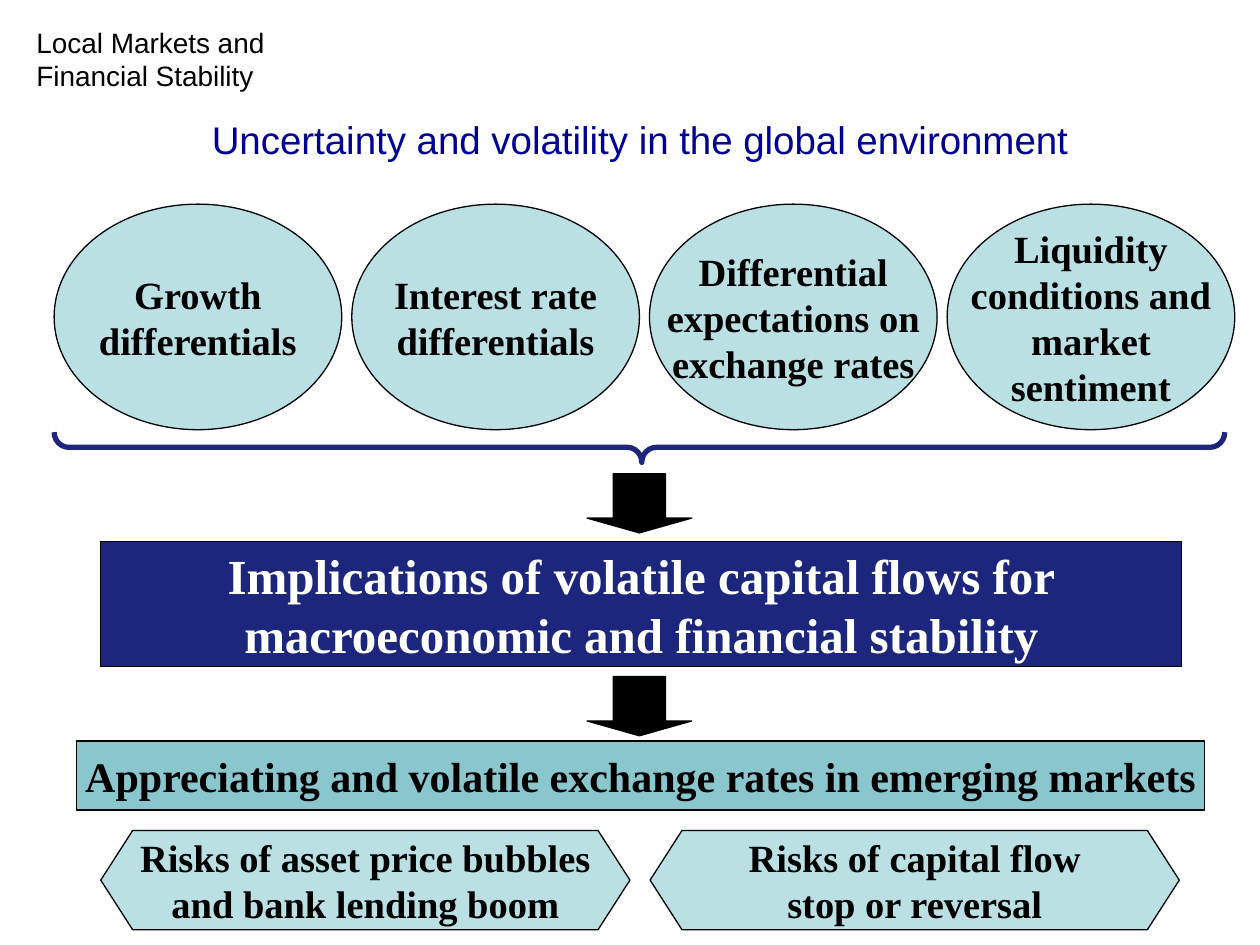
from pptx import Presentation
from pptx.dml.color import RGBColor
from pptx.enum.shapes import MSO_SHAPE
from pptx.enum.text import MSO_ANCHOR, MSO_AUTO_SIZE, PP_ALIGN
from pptx.util import Inches, Pt

COLORS = {
    "navy": "1C267D",
    "title": "000099",
    "pale": "BBE0E3",
    "teal": "8AC6CD",
    "black": "000000",
    "white": "FFFFFF",
}
UNIT = Inches(0.1)  # the slide is a grid of 100 columns by 75 rows
SERIF, SANS = "Times New Roman", "Arial"

DRIVERS = [
    ["Growth", "differentials"],
    ["Interest rate", "differentials"],
    ["Differential", "expectations on", "exchange rates"],
    ["Liquidity", "conditions and", "market", "sentiment"],
]
RISKS = [
    ["Risks of asset price bubbles", "and bank lending boom"],
    ["Risks of capital flow", "stop or reversal"],
]


def color(name):
    return RGBColor.from_string(COLORS[name])


def grid(*cells):
    return [round(cell * UNIT) for cell in cells]


def write(frame, lines, size, ink="black", font=SERIF, bold=True,
          align=PP_ALIGN.CENTER, **frame_format):
    for key, value in frame_format.items():
        setattr(frame, key, value)
    for number, line in enumerate(lines):
        paragraph = frame.paragraphs[0] if number == 0 else frame.add_paragraph()
        paragraph.text = line
        paragraph.alignment = align
        look = {"name": font, "size": Pt(size), "bold": bold}
        for key, value in look.items():
            setattr(paragraph.font, key, value)
        paragraph.font.color.rgb = color(ink)


def add_block(slide, kind, box, fill, lines=(), size=22, ink="black", adjust=()):
    block = slide.shapes.add_shape(kind, *grid(*box))
    block.shadow.inherit = False
    block.fill.solid()
    block.fill.fore_color.rgb = color(fill)
    block.line.color.rgb = color("black")
    block.line.width = Pt(0.75)
    for index, value in enumerate(adjust):
        block.adjustments[index] = value
    write(block.text_frame, lines, size, ink,
          word_wrap=False, vertical_anchor=MSO_ANCHOR.MIDDLE)


def add_row(slide, kind, box, gap, texts, adjust=()):
    """Spread equal blocks over the box, one for each text."""
    left, top, width, height = box
    block_width = (width - gap * (len(texts) - 1)) / len(texts)
    for column, lines in enumerate(texts):
        place = (left + column * (block_width + gap), top, block_width, height)
        add_block(slide, kind, place, "pale", lines, adjust=adjust)


def add_brace(slide, box):
    """Lay a left brace on its side, so that its point faces down."""
    left, top, width, height = box
    place = (left + (width - height) / 2, top + (height - width) / 2, height, width)
    brace = slide.shapes.add_shape(MSO_SHAPE.LEFT_BRACE, *grid(*place))
    brace.shadow.inherit = False
    brace.rotation = 270
    brace.adjustments[0], brace.adjustments[1] = 0.48, 0.502
    brace.fill.background()
    brace.line.color.rgb = color("navy")
    brace.line.width = Pt(3)


def add_header(slide, box):
    header = slide.shapes.add_textbox(*grid(*box))
    write(header.text_frame, ["Local Markets and Financial Stability"], 16,
          font=SANS, bold=False, align=PP_ALIGN.LEFT, word_wrap=True)


def place_title(slide, box):
    title = slide.shapes.title
    title.left, title.top, title.width, title.height = grid(*box)
    write(title.text_frame, ["Uncertainty and volatility in the global environment"],
          22, "title", SANS, False, word_wrap=True,
          vertical_anchor=MSO_ANCHOR.MIDDLE, auto_size=MSO_AUTO_SIZE.NONE)
    title.text_frame.paragraphs[0].line_spacing = 0.9


def add_flow(slide, box):
    """Brace, arrows and the two statements, stacked down the box."""
    left, top, width, _ = box
    add_brace(slide, (left, top, width, 2.4))
    for offset in (3.3, 19.4):
        add_block(slide, MSO_SHAPE.DOWN_ARROW,
                  (left + width / 2 - 4.15, top + offset, 8.3, 4.7), "black",
                  adjust=(0.5, 0.25))
    add_block(slide, MSO_SHAPE.RECTANGLE, (left + 3.7, top + 8.7, 85.8, 9.9), "navy",
              ["Implications of volatile capital flows for",
               "macroeconomic and financial stability"], 28, "white")
    add_block(slide, MSO_SHAPE.RECTANGLE, (left + 1.8, top + 24.5, 89.5, 5.5), "teal",
              ["Appreciating and volatile exchange rates in emerging markets"], 24)


def main():
    deck = Presentation()
    deck.slide_width, deck.slide_height = grid(100, 75)
    slide = deck.slides.add_slide(deck.slide_layouts[5])

    # Heading
    add_header(slide, (1.9, 1.5, 22.3, 6.4))
    place_title(slide, (1.6, 9.1, 98.4, 4.3))
    # Drivers of capital flows
    add_row(slide, MSO_SHAPE.OVAL, (4.3, 16.2, 93.7, 17.9), 0.8, DRIVERS)
    # Consequences
    add_flow(slide, (4.3, 34.3, 92.9, 30))
    # Risks
    add_row(slide, MSO_SHAPE.HEXAGON, (8, 65.9, 85.6, 7.9), 1.6, RISKS,
            adjust=(0.32, 1.15))

    deck.save("out.pptx")


if __name__ == "__main__":
    main()
